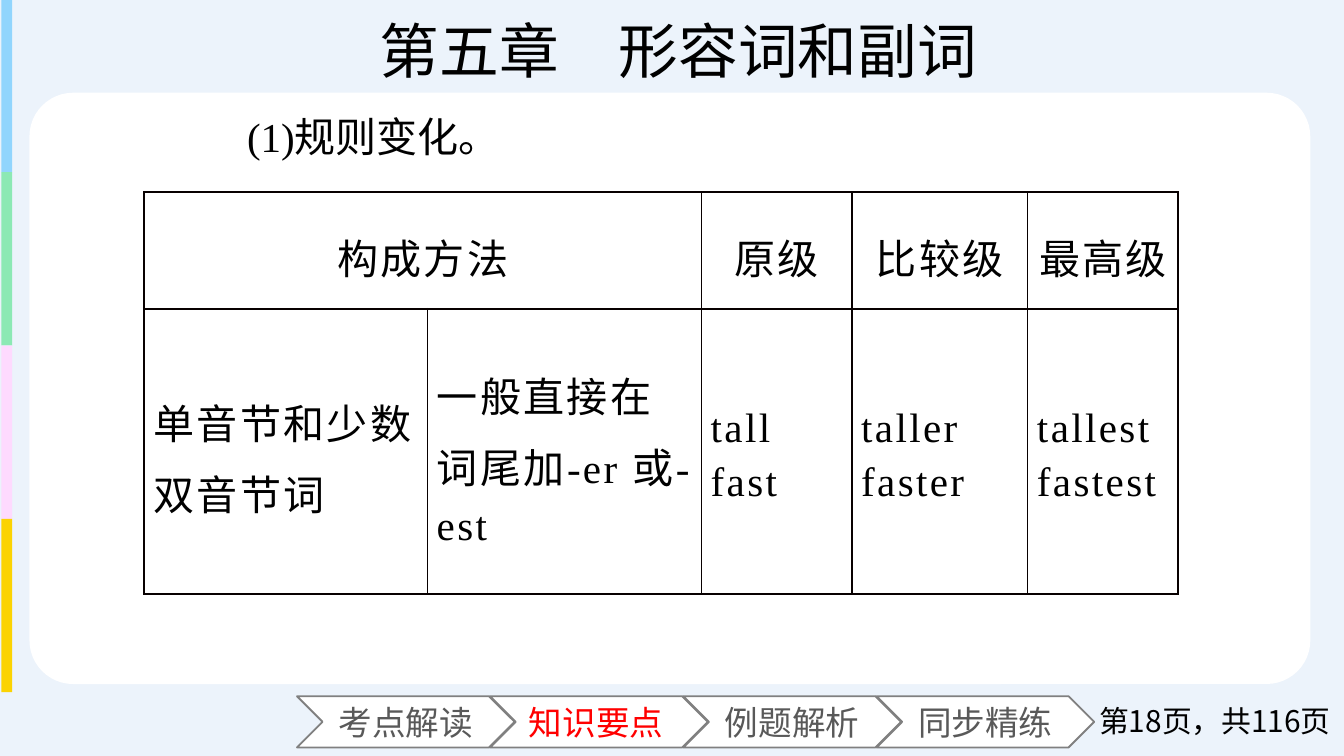
from lxml.etree import SubElement
from pptx import Presentation
from pptx.dml.color import RGBColor
from pptx.enum.shapes import MSO_SHAPE
from pptx.enum.text import MSO_ANCHOR, PP_ALIGN
from pptx.oxml.ns import qn
from pptx.util import Pt

COLORS = {
    "page": "ECF3FB", "white": "FFFFFF", "black": "000000",
    "blue": "91D5FD", "green": "8CE9B4", "pink": "FEDAFE", "yellow": "FBD302",
    "outline": "808080", "tab": "595959", "active": "FF0000", "border": "080000",
}
SERIF = "Times New Roman"
SANS = "Noto Sans CJK SC"


class Deck:
    def __init__(self, width, height):
        self.prs = Presentation()
        self.prs.slide_width, self.prs.slide_height = Pt(width), Pt(height)
        self.s = self.prs.slides.add_slide(self.prs.slide_layouts[6])

    def color(self, name):
        return RGBColor.from_string(COLORS[name])

    def style_text(self, tf, text, size, font=SERIF, color="black", align=PP_ALIGN.LEFT,
                   anchor=MSO_ANCHOR.TOP, line_spacing=None, spacing=None):
        tf.text = text
        tf.word_wrap = True
        tf.vertical_anchor = anchor
        for p in tf.paragraphs:
            p.alignment = align
            p.line_spacing = line_spacing
            for r in p.runs:
                r.font.size = Pt(size)
                r.font.name = font
                r.font.bold = False
                r.font.color.rgb = self.color(color)
                rPr = r._r.get_or_add_rPr()
                SubElement(rPr, qn("a:ea")).set("typeface", SANS)
                if spacing:
                    rPr.set("spc", str(round(spacing * 100)))

    def shape(self, kind, x, y, w, h, fill, line=None, adj=None):
        sp = self.s.shapes.add_shape(kind, Pt(x), Pt(y), Pt(w), Pt(h))
        sp.shadow.inherit = False
        sp.fill.solid()
        sp.fill.fore_color.rgb = self.color(fill)
        if line:
            sp.line.color.rgb = self.color(line)
            sp.line.width = Pt(1)
        else:
            sp.line.fill.background()
        if adj is not None:
            sp.adjustments[0] = adj
        return sp

    def text(self, x, y, w, h, text, size, **style):
        sp = self.s.shapes.add_textbox(Pt(x), Pt(y), Pt(w), Pt(h))
        self.style_text(sp.text_frame, text, size, **style)

    def border(self, cell):
        tcPr = cell._tc.get_or_add_tcPr()
        for i, side in enumerate(("lnL", "lnR", "lnT", "lnB")):
            ln = tcPr.makeelement(qn("a:" + side), {"w": str(Pt(1))})
            fill = SubElement(ln, qn("a:solidFill"))
            SubElement(fill, qn("a:srgbClr")).set("val", COLORS["border"])
            tcPr.insert(i, ln)

    def table(self, x, y, widths, heights, rows):
        frame = self.s.shapes.add_table(len(rows), len(widths), Pt(x), Pt(y),
                                        Pt(sum(widths)), Pt(sum(heights)))
        table = frame.table
        table.first_row = table.horz_banding = False
        for col, width in zip(table.columns, widths):
            col.width = Pt(width)
        for row, height, texts in zip(table.rows, heights, rows):
            row.height = Pt(height)
            align = PP_ALIGN.CENTER if texts is rows[0] else PP_ALIGN.LEFT
            for cell, text in zip(row.cells, texts):
                cell.fill.background()
                self.border(cell)
                cell.margin_left = cell.margin_right = Pt(5)
                cell.margin_top = cell.margin_bottom = 0
                cell.vertical_anchor = MSO_ANCHOR.MIDDLE
                if text:
                    self.style_text(cell.text_frame, text, 22, align=align, line_spacing=1.2,
                                    anchor=MSO_ANCHOR.MIDDLE, spacing=1.3)
        table.cell(0, 0).merge(table.cell(0, 1))


def main():
    deck = Deck(720, 405)
    deck.shape(MSO_SHAPE.RECTANGLE, 0, 0, 720, 405, "page")
    deck.text(126.7, 3.6, 473.8, 46, "第五章　形容词和副词", 32, align=PP_ALIGN.CENTER)
    for i, fill in enumerate(("blue", "green", "pink", "yellow")):
        deck.shape(MSO_SHAPE.RECTANGLE, 0.7, -0.7 + 92.9 * i, 5.8, 92.9, fill)
    deck.shape(MSO_SHAPE.ROUNDED_RECTANGLE, 15.8, 49.7, 686.2, 316.8, "white", adj=0.074)

    for i, label in enumerate(("考点解读", "知识要点", "例题解析", "同步精练")):
        active = label == "知识要点"
        sp = deck.shape(MSO_SHAPE.CHEVRON, 159.1 + 103.5 * i, 373, 116.6, 27.4,
                        "white", line="outline")
        deck.style_text(sp.text_frame, label, 18, font=SANS,
                        color="active" if active else "tab",
                        align=PP_ALIGN.JUSTIFY if active else PP_ALIGN.CENTER,
                        anchor=MSO_ANCHOR.MIDDLE)

    deck.text(573.8, 375.1, 146.2, 21.6, "第18页，共116页", 16, font=SANS,
              align=PP_ALIGN.RIGHT, anchor=MSO_ANCHOR.MIDDLE)
    deck.text(125.3, 56.2, 144.7, 33.8, "(1)规则变化。", 22)
    deck.table(77.2, 103, (151.8, 146.8, 80.6, 94.2, 80.6), (62.4, 152.9), (
        ("构成方法", "", "原级", "比较级", "最高级"),
        ("单音节和少数双音节词", "一般直接在词尾加-er 或-est",
         "tall\nfast", "taller\nfaster", "tallest\nfastest"),
    ))
    deck.prs.save("out.pptx")


if __name__ == "__main__":
    main()
